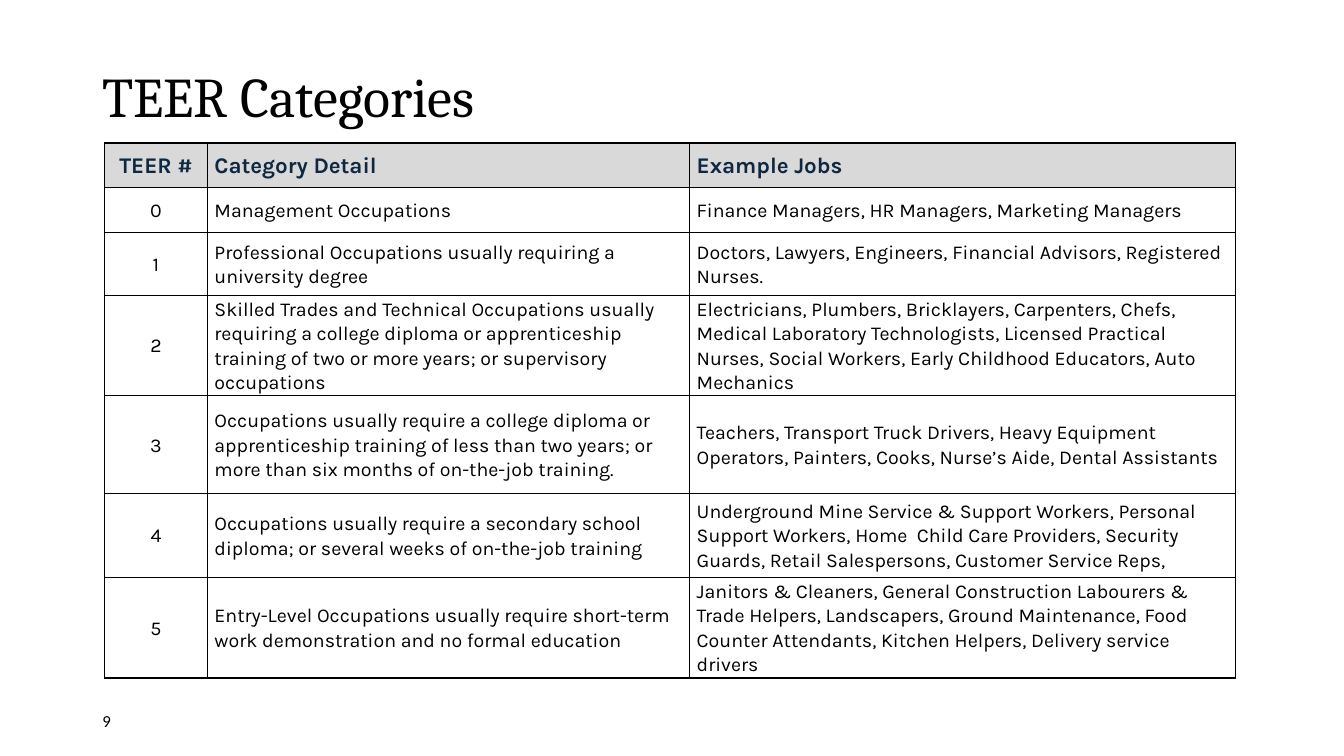
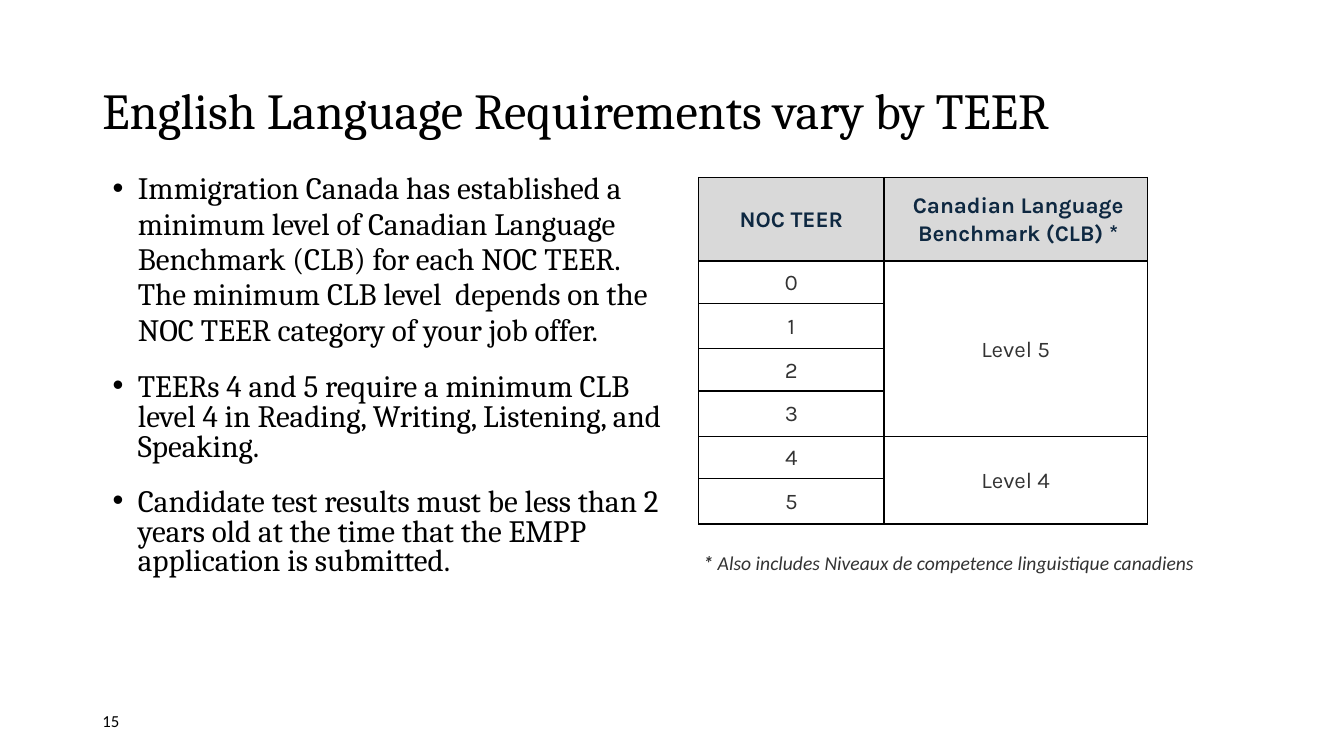
from dataclasses import dataclass

from lxml import etree
from pptx import Presentation
from pptx.dml.color import RGBColor
from pptx.enum import text
from pptx.oxml import ns
from pptx.util import Pt

LEFT, CENTER = text.PP_ALIGN.LEFT, text.PP_ALIGN.CENTER
MIDDLE, TOP = text.MSO_ANCHOR.MIDDLE, text.MSO_ANCHOR.TOP


@dataclass(frozen=True)
class Theme:
    black: str = "000000"
    white: str = "FFFFFF"
    navy: str = "0E2841"
    charcoal: str = "333333"
    header_fill: str = "D9D9D9"
    serif: str = "Cambria"
    sans: str = "Calibri"
    table_font: str = "Karla"
    title_size: float = 40
    long_title_size: float = 36
    body_size: float = 22.2
    header_size: float = 16
    detail_size: float = 14
    page_size: float = 12
    margin: float = 66
    content_width: float = 828


class Deck:
    def __init__(self, theme):
        self.theme = theme
        self.prs = Presentation()
        self.prs.slide_width, self.prs.slide_height = Pt(960), Pt(540)
        self.s = None

    def new_slide(self, title, page, size, height):
        th = self.theme
        self.s = self.prs.slides.add_slide(self.prs.slide_layouts[5])
        sp = self.s.shapes.title
        sp.left, sp.top = Pt(th.margin), Pt(28.8)
        sp.width, sp.height = Pt(th.content_width), Pt(height)
        tf = sp.text_frame
        tf.word_wrap, tf.auto_size = True, text.MSO_AUTO_SIZE.NONE
        tf.vertical_anchor = MIDDLE
        p = tf.paragraphs[0]
        p.alignment, p.line_spacing = LEFT, 0.9
        self.run(p, title, th.serif, size, th.black)
        tf = self.text_box(th.margin, 500.4, 216, 28.8, MIDDLE)
        self.run(tf.paragraphs[0], page, th.sans, th.page_size, th.black)

    def run(self, p, words, font, size, color, bold=False, italic=False):
        r = p.add_run()
        r.text = words
        r.font.name, r.font.size = font, Pt(size)
        r.font.bold, r.font.italic = bold, italic
        r.font.color.rgb = RGBColor.from_string(color)

    def text_box(self, x, y, w, h, anchor=TOP):
        tf = self.s.shapes.add_textbox(Pt(x), Pt(y), Pt(w), Pt(h)).text_frame
        tf.word_wrap, tf.vertical_anchor = True, anchor
        return tf

    def bullets(self, x, y, w, h, items):
        """Draw (words, line spacing) pairs as a bulleted list."""
        th = self.theme
        tf = self.text_box(x, y, w, h)
        for i, (words, spacing) in enumerate(items):
            p = tf.add_paragraph() if i else tf.paragraphs[0]
            pPr = p._p.get_or_add_pPr()
            pPr.set("marL", str(Pt(18)))
            pPr.set("indent", str(-Pt(18)))
            etree.SubElement(pPr, ns.qn("a:buFont")).set("typeface", "Arial")
            etree.SubElement(pPr, ns.qn("a:buChar")).set("char", "•")
            p.line_spacing, p.space_after = spacing, Pt(8)
            if i:
                p.space_before = Pt(10)
            self.run(p, words, th.serif, th.body_size, th.black)

    def footnote(self, x, y, w, h, mark, words):
        th = self.theme
        p = self.text_box(x, y, w, h).paragraphs[0]
        p.line_spacing, p.space_after = 1.15, Pt(8)
        for part, bold in ((mark, True), (words, False)):
            self.run(p, part, th.sans, th.detail_size, th.charcoal, bold, True)

    def border(self, cell):
        tcPr = cell._tc.get_or_add_tcPr()
        for side in ("lnL", "lnR", "lnT", "lnB"):
            ln = etree.SubElement(tcPr, ns.qn(f"a:{side}"), w=str(Pt(1)))
            fill = etree.SubElement(ln, ns.qn("a:solidFill"))
            etree.SubElement(fill, ns.qn("a:srgbClr"), val=self.theme.black)

    def table(self, x, y, widths, heights, rows, aligns, size, color):
        """Draw a bordered table whose first row is the header; None leaves a cell empty."""
        th = self.theme
        frame = self.s.shapes.add_table(len(rows), len(widths), Pt(x), Pt(y),
                                        Pt(sum(widths)), Pt(sum(heights)))
        table = frame.table
        table.first_row = table.horz_banding = False
        for column, width in zip(table.columns, widths):
            column.width = Pt(width)
        for i, (row, height) in enumerate(zip(rows, heights)):
            table.rows[i].height = Pt(height)
            for j, words in enumerate(row):
                cell = table.cell(i, j)
                self.border(cell)
                cell.fill.solid()
                fill = th.white if i else th.header_fill
                cell.fill.fore_color.rgb = RGBColor.from_string(fill)
                cell.vertical_anchor = MIDDLE
                cell.margin_left = cell.margin_right = Pt(5)
                cell.margin_top = cell.margin_bottom = 0
                if words is None:
                    continue
                p = cell.text_frame.paragraphs[0]
                p.alignment = aligns[j]
                p.line_spacing, p.space_after = 1.07, Pt(8)
                if i:
                    self.run(p, words, th.table_font, size, color)
                else:
                    self.run(p, words, th.table_font, th.header_size, th.navy, True)
        return table


def categories_slide(deck):
    th = deck.theme
    deck.new_slide("TEER Categories", "9", th.title_size, 85)
    rows = [
        ("TEER #", "Category Detail", "Example Jobs"),
        ("0", "Management Occupations",
         "Finance Managers, HR Managers, Marketing Managers"),
        ("1", "Professional Occupations usually requiring a university degree",
         "Doctors, Lawyers, Engineers, Financial Advisors, Registered Nurses."),
        ("2", "Skilled Trades and Technical Occupations usually requiring a college "
              "diploma or apprenticeship training of two or more years; or "
              "supervisory occupations",
         "Electricians, Plumbers, Bricklayers, Carpenters, Chefs, Medical Laboratory "
         "Technologists, Licensed Practical Nurses, Social Workers, Early Childhood "
         "Educators, Auto Mechanics"),
        ("3", "Occupations usually require a college diploma or apprenticeship "
              "training of less than two years; or more than six months of "
              "on-the-job training.",
         "Teachers, Transport Truck Drivers, Heavy Equipment Operators, Painters, "
         "Cooks, Nurse’s Aide, Dental Assistants"),
        ("4", "Occupations usually require a secondary school diploma; or several "
              "weeks of on-the-job training",
         "Underground Mine Service & Support Workers, Personal Support Workers, "
         "Home  Child Care Providers, Security Guards, Retail Salespersons, "
         "Customer Service Reps,"),
        ("5", "Entry-Level Occupations usually require short-term work demonstration "
              "and no formal education",
         "Janitors & Cleaners, General Construction Labourers & Trade Helpers, "
         "Landscapers, Ground Maintenance, Food Counter Attendants, Kitchen "
         "Helpers, Delivery service drivers"),
    ]
    deck.table(74.7, 102.2, (73.5, 344.5, 390), (31.7, 32.4, 44.6, 67.7, 69.8, 59.8, 51.8),
               rows, (CENTER, LEFT, LEFT), th.detail_size, th.black)


def language_slide(deck):
    th = deck.theme
    deck.new_slide("English Language Requirements vary by TEER", "15",
                   th.long_title_size, 104.4)
    deck.bullets(73.4, 118.8, 406.8, 347, [
        ("Immigration Canada has established a minimum level of Canadian Language "
         "Benchmark (CLB) for each NOC TEER. The minimum CLB level  depends on the "
         "NOC TEER category of your job offer.", 0.95),
        ("TEERs 4 and 5 require a minimum CLB level 4 in Reading, Writing, "
         "Listening, and Speaking.", 0.8),
        ("Candidate test results must be less than 2 years old at the time that "
         "the EMPP application is submitted.", 0.8),
    ])
    levels = {0: "Level 5", 4: "Level 4"}
    rows = [("NOC TEER", "Canadian Language Benchmark (CLB) *")]
    rows += [(str(teer), levels.get(teer)) for teer in range(6)]
    table = deck.table(499, 126.7, (132.5, 188), [59.8] + [30.2, 32.4] * 3,
                       rows, (CENTER, CENTER), th.header_size, th.charcoal)
    table.cell(0, 1).margin_left = Pt(8.6)
    for first, last in ((1, 4), (5, 6)):
        table.cell(first, 1).merge(table.cell(last, 1))
    deck.footnote(495.4, 387.4, 443.5, 26, "* ",
                  "Also includes Niveaux de competence linguistique canadiens")


def main():
    deck = Deck(Theme())
    categories_slide(deck)
    language_slide(deck)
    deck.prs.save("out.pptx")


if __name__ == "__main__":
    main()
